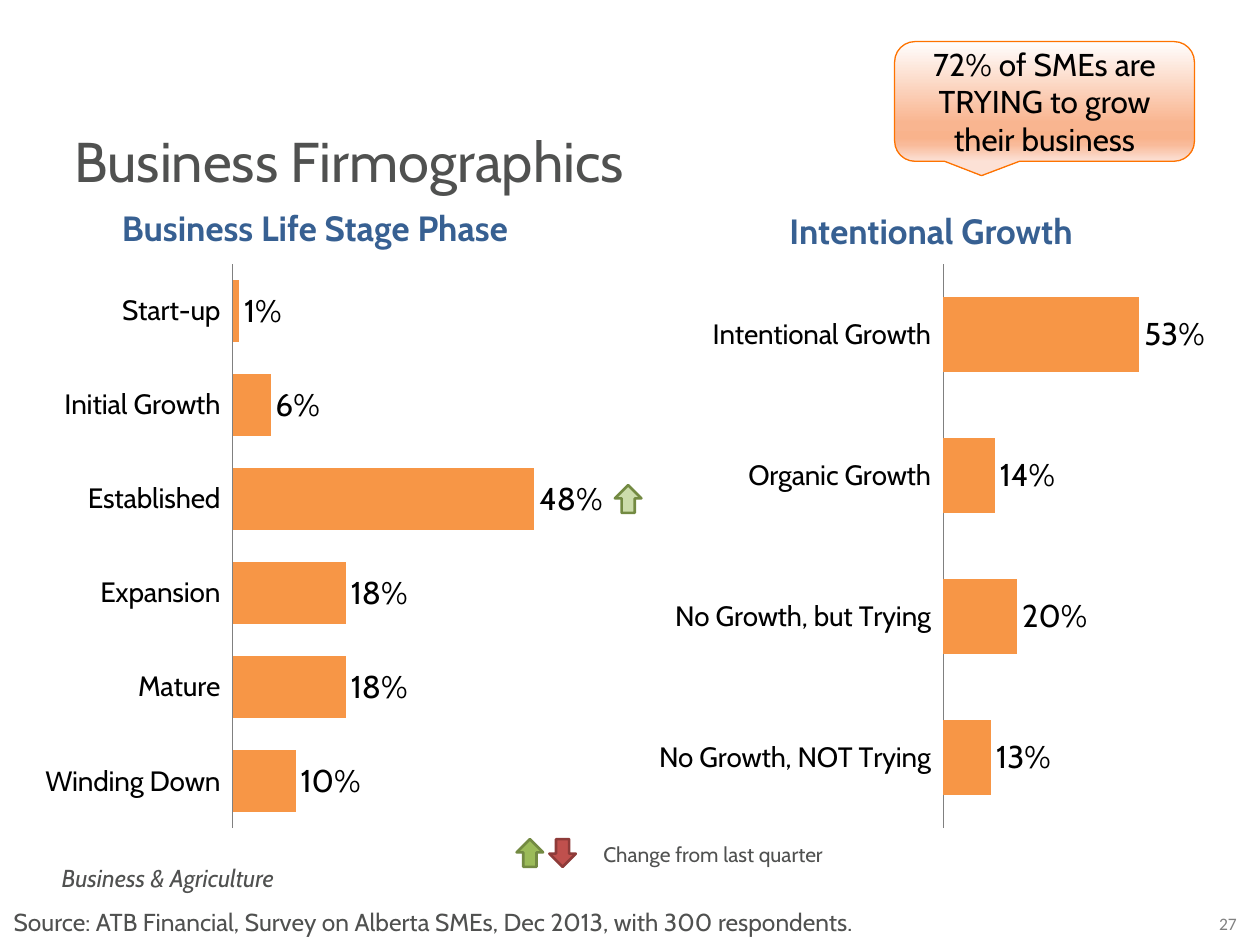
from dataclasses import dataclass

from lxml import etree
from pptx import Presentation
from pptx.chart.data import CategoryChartData
from pptx.dml.color import RGBColor
from pptx.enum.chart import XL_CHART_TYPE, XL_LABEL_POSITION, XL_TICK_LABEL_POSITION, XL_TICK_MARK
from pptx.enum.shapes import MSO_SHAPE
from pptx.enum.text import MSO_ANCHOR, MSO_AUTO_SIZE, PP_ALIGN
from pptx.oxml import parse_xml
from pptx.oxml.ns import nsdecls, qn
from pptx.util import Inches, Pt

LEFT, CENTER = PP_ALIGN.LEFT, PP_ALIGN.CENTER
MIDDLE = MSO_ANCHOR.MIDDLE
FIT_TEXT = MSO_AUTO_SIZE.SHAPE_TO_FIT_TEXT
ARROW, CALLOUT = MSO_SHAPE.DOWN_ARROW, MSO_SHAPE.ROUNDED_RECTANGULAR_CALLOUT
BARS = XL_CHART_TYPE.BAR_CLUSTERED
NO_TICKS, TICKS_LOW = XL_TICK_MARK.NONE, XL_TICK_LABEL_POSITION.LOW
OUTSIDE_END = XL_LABEL_POSITION.OUTSIDE_END

BLACK = RGBColor(0x00, 0x00, 0x00)
GRAY = RGBColor(0x50, 0x51, 0x50)
MID_GRAY = RGBColor(0x80, 0x80, 0x80)
BLUE = RGBColor(0x37, 0x60, 0x92)
ORANGE = RGBColor(0xF7, 0x96, 0x46)
CALLOUT_EDGE = RGBColor(0xFE, 0x73, 0x00)
GREEN = RGBColor(0x9B, 0xBB, 0x59)
GREEN_EDGE = RGBColor(0x73, 0x8A, 0x42)
RED = RGBColor(0xC0, 0x50, 0x4D)
RED_EDGE = RGBColor(0x8E, 0x3B, 0x39)
CALLOUT_STOPS = [
    (0, RGBColor(0xFF, 0xFE, 0xFE)),
    (68, RGBColor(0xF9, 0xB5, 0x90)),
    (81, RGBColor(0xF9, 0xB3, 0x8C)),
    (86, RGBColor(0xF9, 0xBA, 0x99)),
    (100, RGBColor(0xFC, 0xE1, 0xD6)),
]

FONT = "Cabin"
COLUMNS, ROWS = 100, 75
CELL = Inches(10) // COLUMNS


@dataclass
class Box:
    """An area in grid columns and rows."""
    left: float
    top: float
    width: float
    height: float

    def inner(self, column, row, width, height):
        return Box(self.left + column, self.top + row, width, height)

    def lengths(self):
        return [round(n * CELL) for n in (self.left, self.top, self.width, self.height)]


def write(frame, text, size, color, align=LEFT, font=FONT, bold=False, italic=False):
    frame.word_wrap = True
    paragraph = frame.paragraphs[0]
    paragraph.alignment = align
    run = paragraph.add_run()
    run.text = text
    run.font.name, run.font.size = font, Pt(size)
    run.font.bold, run.font.italic = bold, italic
    run.font.color.rgb = color


def add_label(slide, box, text, size, color, **style):
    frame = slide.shapes.add_textbox(*box.lengths()).text_frame
    write(frame, text, size, color, **style)
    frame.auto_size = FIT_TEXT


def add_arrow(slide, box, fill, edge, up=False, opacity=100):
    arrow = slide.shapes.add_shape(ARROW, *box.lengths())
    arrow.shadow.inherit = False
    arrow.rotation = 180 if up else 0
    arrow.fill.solid()
    arrow.fill.fore_color.rgb = fill
    if opacity < 100:
        color = arrow._element.spPr.find(f".//{qn('a:srgbClr')}")
        etree.SubElement(color, qn("a:alpha"), val=str(opacity * 1000))
    arrow.line.color.rgb = edge
    arrow.line.width = Pt(1.5)


def add_title(slide, box):
    title = slide.shapes.title
    title.left, title.top, title.width, title.height = box.lengths()
    title.text_frame.vertical_anchor = MIDDLE
    write(title.text_frame, "Business Firmographics", 32, GRAY)


def add_callout(slide, box):
    callout = slide.shapes.add_shape(CALLOUT, *box.lengths())
    callout.shadow.inherit = False
    for i, value in enumerate((-0.21, 0.62, 0.17)):
        callout.adjustments[i] = value
    callout.fill.gradient()
    callout.fill.gradient_angle = 270
    stops = callout._element.spPr.find(f".//{qn('a:gsLst')}")
    for stop in list(stops):
        stops.remove(stop)
    for share, color in CALLOUT_STOPS:
        stop = etree.SubElement(stops, qn("a:gs"), pos=str(share * 1000))
        etree.SubElement(stop, qn("a:srgbClr"), val=str(color))
    callout.line.color.rgb = CALLOUT_EDGE
    callout.line.width = Pt(0.75)
    callout.text_frame.vertical_anchor = MIDDLE
    write(callout.text_frame, "72% of SMEs are TRYING to grow their business", 18, BLACK, align=CENTER)


def set_plot_area(chart, x, width):
    """Fix the inner plot area, in shares of the chart."""
    plot_area = chart._chartSpace.chart.plotArea
    for old in plot_area.findall(qn("c:layout")):
        plot_area.remove(old)
    sizes = "".join(f'<c:{tag} val="{value}"/>'
                    for tag, value in (("x", x), ("y", 0), ("w", width), ("h", 0.96)))
    plot_area.insert(0, parse_xml(
        f'<c:layout {nsdecls("c")}><c:manualLayout><c:layoutTarget val="inner"/>'
        f'<c:xMode val="edge"/><c:yMode val="edge"/>{sizes}</c:manualLayout></c:layout>'))


def add_bar_chart(slide, box, shares, maximum, gap, plot_x):
    data = CategoryChartData(number_format="0%")
    data.categories = list(shares)
    data.add_series("Series 1", list(shares.values()))
    chart = slide.shapes.add_chart(BARS, *box.lengths(), data).chart
    chart.has_title = chart.has_legend = False
    chart.font.name, chart.font.size = FONT, Pt(18)
    chart.font.color.rgb = BLACK
    set_plot_area(chart, plot_x, round(1 - plot_x, 3))

    categories, values = chart.category_axis, chart.value_axis
    categories.reverse_order = True
    categories.major_tick_mark = categories.minor_tick_mark = NO_TICKS
    categories.tick_label_position = TICKS_LOW
    categories.tick_labels.font.size = Pt(16)
    categories.format.line.color.rgb = MID_GRAY
    categories.format.line.width = Pt(0.75)
    values.minimum_scale, values.maximum_scale = 0, maximum
    values.has_major_gridlines = False
    values.visible = False

    plot = chart.plots[0]
    plot.gap_width = gap
    plot.vary_by_categories = False
    bars = plot.series[0].format.fill
    bars.solid()
    bars.fore_color.rgb = ORANGE
    plot.has_data_labels = True
    labels = plot.data_labels
    labels.show_value = True
    labels.number_format, labels.number_format_is_linked = "0%", False
    labels.position = OUTSIDE_END


def add_life_stage(slide, box):
    add_label(slide, box.inner(14.7, 0, 35, 4.3), "Business Life Stage Phase", 20, BLUE,
              align=CENTER, bold=True)
    shares = {"Start-up": 0.01, "Initial Growth": 0.06, "Established": 0.48,
              "Expansion": 0.18, "Mature": 0.18, "Winding Down": 0.1}
    add_bar_chart(slide, box.inner(0, 5, box.width, box.height - 5), shares, 0.65, 50, 0.442)
    add_arrow(slide, box.inner(56, 22.6, 2.1, 2.2), GREEN, GREEN_EDGE, up=True, opacity=50)


def add_growth(slide, box):
    add_label(slide, box.inner(8.8, 0.2, 25.6, 4.4), "Intentional Growth", 20, BLUE,
              align=CENTER, bold=True)
    shares = {"Intentional Growth": 0.53, "Organic Growth": 0.14,
              "No Growth, but Trying": 0.2, "No Growth, NOT Trying": 0.13}
    add_bar_chart(slide, box.inner(0, 5, box.width, box.height - 5), shares, 0.75, 90, 0.503)


def add_legend(slide, box):
    add_arrow(slide, box.inner(0, 0.3, 2.1, 2.2), GREEN, GREEN_EDGE, up=True)
    add_arrow(slide, box.inner(2.6, 0.3, 2.1, 2.2), RED, RED_EDGE)
    add_label(slide, box.inner(5.9, 0, box.width - 5.9, box.height), "Change from last quarter", 12, GRAY)


def add_footer(slide, box):
    add_label(slide, box.inner(3.9, 0, 28.1, 3.4), "Business & Agriculture", 14, GRAY, italic=True)
    add_label(slide, box.inner(0.1, 3.5, 70.9, 3.4),
              "Source: ATB Financial, Survey on Alberta SMEs, Dec 2013, with 300 respondents.", 14, GRAY)
    add_label(slide, box.inner(95, 4, 4.9, 2.7), "27", 10, MID_GRAY, align=CENTER, font="Calibri")


def main():
    deck = Presentation()
    deck.slide_width, deck.slide_height = COLUMNS * CELL, ROWS * CELL
    slide = deck.slides.add_slide(deck.slide_layouts[5])
    add_title(slide, Box(4.9, 9.5, 58.4, 6.4))
    add_life_stage(slide, Box(-7.2, 15.9, 58.1, 51.7))
    add_growth(slide, Box(52.3, 15.9, 44.6, 51.7))
    add_callout(slide, Box(71, 3.3, 23.8, 9.5))
    add_legend(slide, Box(41, 66.3, 30, 3.1))
    add_footer(slide, Box(0, 68, COLUMNS, 7))
    deck.save("out.pptx")


if __name__ == "__main__":
    main()
